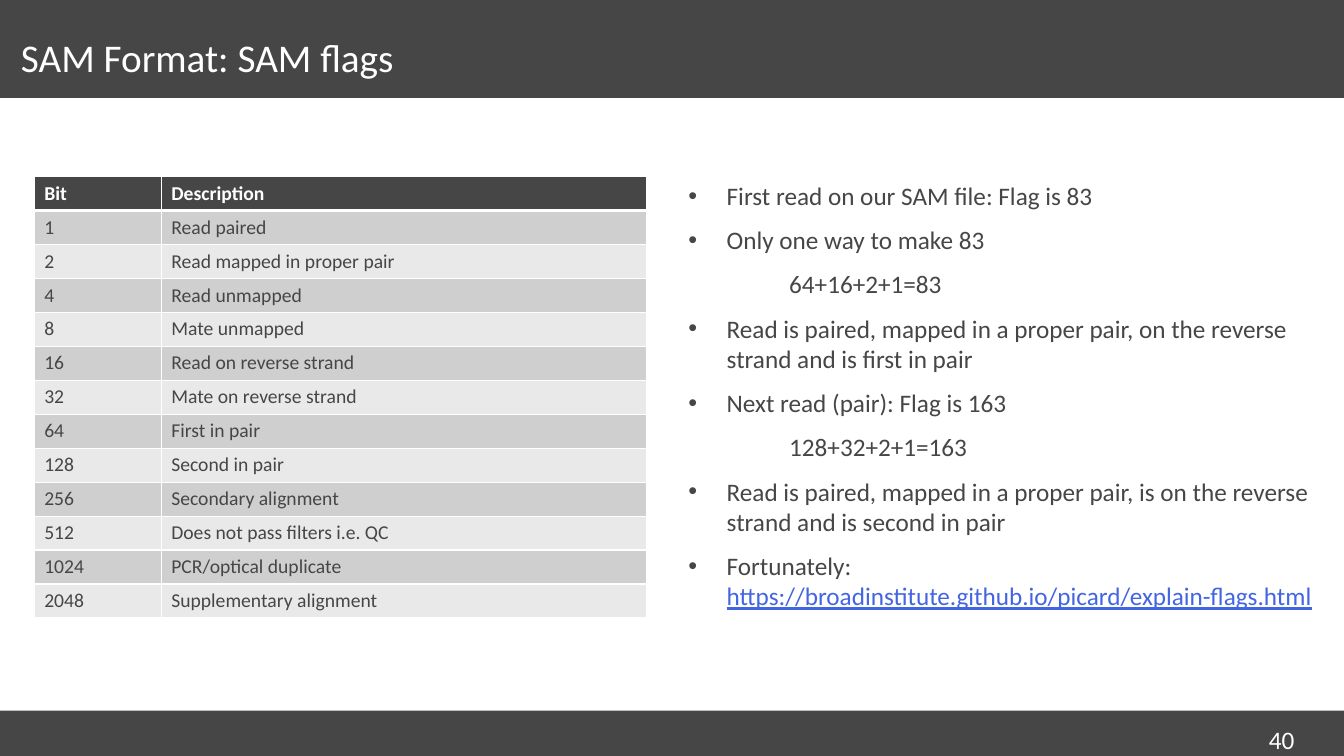
"""Build a slide that explains the SAM flag bits."""
import lxml.etree
import pptx
import pptx.dml.color
import pptx.enum.shapes
import pptx.enum.text
import pptx.oxml
import pptx.oxml.ns
import pptx.util

HUES = {"dark": "464646", "white": "FFFFFF", "odd": "CFCFCF",
        "even": "E9E9E9", "link": "4365E2"}
FLAGS = ["Read paired", "Read mapped in proper pair", "Read unmapped",
         "Mate unmapped", "Read on reverse strand", "Mate on reverse strand",
         "First in pair", "Second in pair", "Secondary alignment",
         "Does not pass filters i.e. QC", "PCR/optical duplicate",
         "Supplementary alignment"]
NOTES = [
    (True, ["First read on our SAM file: Flag is 83"]),
    (True, ["Only one way to make 83"]),
    (False, ["64+16+2+1=83"]),
    (True, ["Read is paired, mapped in a proper pair, on the reverse strand and is first in pair"]),
    (True, ["Next read (pair): Flag is 163"]),
    (False, ["128+32+2+1=163"]),
    (True, ["Read is paired, mapped in a proper pair, is on the reverse strand and is second in pair"]),
    (True, ["Fortunately: ", "https://broadinstitute.github.io/picard/explain-flags.html"]),
]


class Deck:
    """Hold the style, a grid of 64 columns by 36 rows, and the slide."""

    def __init__(self):
        self.show = pptx.Presentation()
        self.show.slide_width = pptx.util.Inches(13.33)
        self.show.slide_height = pptx.util.Inches(7.5)
        self.slide = self.show.slides.add_slide(self.show.slide_layouts[5])
        self.shapes = self.slide.shapes

    def grid(self, *box):
        col, row = self.show.slide_width / 64, self.show.slide_height / 36
        return [int(n * unit) for n, unit in zip(box, (col, row, col, row))]

    def color(self, name):
        return pptx.dml.color.RGBColor.from_string(HUES[name])

    def style(self, para, size, hue, bold=False):
        font = para.font
        font.name, font.size, font.bold = "Calibri", pptx.util.Pt(size), bold
        font.color.rgb = self.color(hue)

    def bar(self, *box):
        bar = self.shapes.add_shape(
            pptx.enum.shapes.MSO_SHAPE.RECTANGLE, *self.grid(*box))
        bar.shadow.inherit = False
        bar.fill.solid()
        bar.fill.fore_color.rgb = self.color("dark")
        bar.line.fill.background()
        self.shapes._spTree.insert(2, bar._element)

    def title(self, text, *box):
        title = self.shapes.title
        title.left, title.top, title.width, title.height = self.grid(*box)
        frame = title.text_frame
        frame.text = text
        frame.auto_size = pptx.enum.text.MSO_AUTO_SIZE.NONE
        frame.vertical_anchor = pptx.enum.text.MSO_ANCHOR.MIDDLE
        frame.margin_left = frame.margin_right = 0
        para = frame.paragraphs[0]
        para.alignment = pptx.enum.text.PP_ALIGN.LEFT
        para.line_spacing = 0.8
        self.style(para, 28, "white")

    def edge(self, cell, row):
        props = cell._tc.get_or_add_tcPr()
        wide = {"lnT": row == 1, "lnB": row == 0}
        for side in ("lnL", "lnR", "lnT", "lnB"):
            width = pptx.util.Pt(3 if wide.get(side) else 1)
            props.append(pptx.oxml.parse_xml(
                f'<a:{side} {pptx.oxml.ns.nsdecls("a")} w="{width}"><a:solidFill>'
                f'<a:srgbClr val="{HUES["white"]}"/></a:solidFill></a:{side}>'))

    def table(self, data, cols, *box):
        table = self.shapes.add_table(
            len(data), len(cols), *self.grid(*box)).table
        for col, width in zip(table.columns, cols):
            col.width = self.grid(width)[0]
        for r, line in enumerate(data):
            fill = "dark" if r == 0 else "odd" if r % 2 else "even"
            for c, text in enumerate(line):
                cell = table.cell(r, c)
                self.edge(cell, r)
                cell.fill.solid()
                cell.fill.fore_color.rgb = self.color(fill)
                cell.text = text
                self.style(cell.text_frame.paragraphs[0], 14,
                           "dark" if r else "white", r == 0)

    def text(self, *box):
        frame = self.shapes.add_textbox(*self.grid(*box)).text_frame
        frame.word_wrap = True
        return frame

    def indent(self, para, dot):
        props = para._p.get_or_add_pPr()
        props.set("marL", str(pptx.util.Inches(0.38 if dot else 1)))
        props.set("indent", str(pptx.util.Inches(-0.38 if dot else 0)))
        if dot:
            tag = pptx.oxml.ns.qn
            hue = lxml.etree.SubElement(props, tag("a:buClr"))
            lxml.etree.SubElement(hue, tag("a:srgbClr"), val=HUES["dark"])
            lxml.etree.SubElement(props, tag("a:buFont"), typeface="Arial")
            lxml.etree.SubElement(props, tag("a:buChar"), char="•")

    def notes(self, items, *box):
        frame = self.text(*box)
        frame.margin_left = frame.margin_right = 0
        for i, (dot, parts) in enumerate(items):
            para = frame.add_paragraph() if i else frame.paragraphs[0]
            self.indent(para, dot)
            para.space_before = pptx.util.Pt(6 if i else 0)
            para.space_after = pptx.util.Pt(4)
            self.style(para, 18, "dark")
            for k, part in enumerate(parts):
                run = para.add_run()
                run.text = part
                if k:
                    run.font.color.rgb = self.color("link")
                    run.font.underline = True

    def number(self, text, *box):
        frame = self.text(*box)
        frame.text = text
        self.style(frame.paragraphs[0], 18, "white")


def main():
    deck = Deck()
    deck.bar(0, 0, 64, 4.66)
    deck.bar(0, 33.84, 64, 2.16)
    deck.title("SAM Format: SAM flags", 1, 1.1, 55.3, 3.6)
    data = [("Bit", "Description")]
    data += [(str(2 ** i), flag) for i, flag in enumerate(FLAGS)]
    deck.table(data, (6.05, 23.09), 1.63, 8.4, 29.14, 1.6 * len(data))
    deck.notes(NOTES, 32.78, 8.35, 29.86, 24.2)
    deck.number("40", 59.95, 34.27, 3.36, 1.2)
    deck.show.save("out.pptx")


if __name__ == "__main__":
    main()
